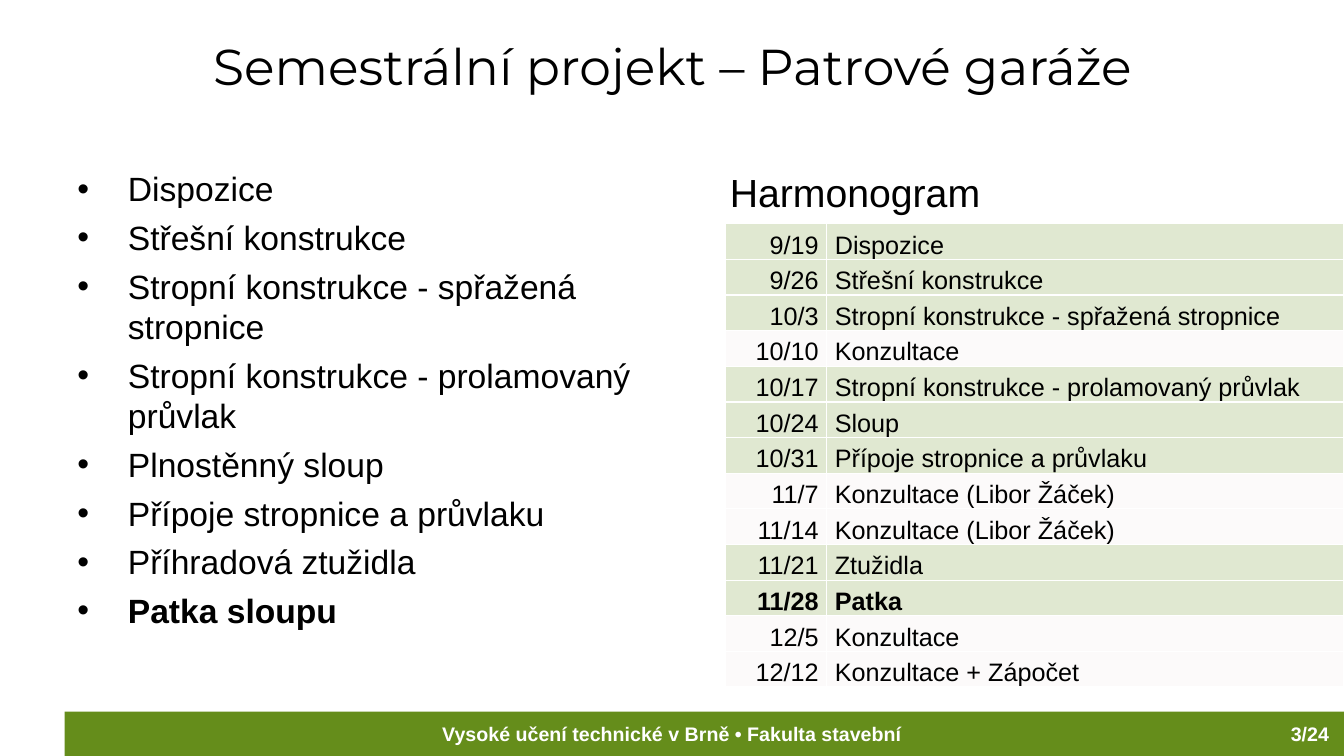
from dataclasses import dataclass

from lxml import etree
from pptx import Presentation
from pptx.dml.color import RGBColor
from pptx.enum.shapes import MSO_SHAPE
from pptx.enum.text import MSO_ANCHOR, PP_ALIGN
from pptx.oxml.ns import qn
from pptx.util import Inches, Pt

LEFT, CENTER, RIGHT = PP_ALIGN.LEFT, PP_ALIGN.CENTER, PP_ALIGN.RIGHT
TOP, BOTTOM = MSO_ANCHOR.TOP, MSO_ANCHOR.BOTTOM
RECT = MSO_SHAPE.RECTANGLE


@dataclass(frozen=True)
class Theme:
    """Colours, fonts and type sizes of the slide."""
    green: str = "658D1B"
    pink: str = "F4E7E7"
    white: str = "FFFFFF"
    black: str = "000000"
    font: str = "Arial"
    display: str = "Montserrat"
    title: int = 36
    head: int = 28
    body: int = 24
    cell: int = 18
    foot: int = 14
    gap: int = 6
    tint: int = 20


THEME = Theme()

TOPICS = [
    "Dispozice",
    "Střešní konstrukce",
    "Stropní konstrukce - spřažená stropnice",
    "Stropní konstrukce - prolamovaný průvlak",
    "Plnostěnný sloup",
    "Přípoje stropnice a průvlaku",
    "Příhradová ztužidla",
    "Patka sloupu",
]

PLAN = [
    ("9/19", "Dispozice"),
    ("9/26", "Střešní konstrukce"),
    ("10/3", "Stropní konstrukce - spřažená stropnice"),
    ("10/10", "Konzultace"),
    ("10/17", "Stropní konstrukce - prolamovaný průvlak"),
    ("10/24", "Sloup"),
    ("10/31", "Přípoje stropnice a průvlaku"),
    ("11/7", "Konzultace (Libor Žáček)"),
    ("11/14", "Konzultace (Libor Žáček)"),
    ("11/21", "Ztužidla"),
    ("11/28", "Patka"),
    ("12/5", "Konzultace"),
    ("12/12", "Konzultace + Zápočet"),
]
CURRENT = "11/28"


def write(para, text, size=THEME.body, color=THEME.black, font=THEME.font,
          bold=False, align=LEFT):
    """Put formatted text into a paragraph."""
    para.alignment = align
    run = para.add_run()
    run.text = text
    run.font.size = Pt(size)
    run.font.name = font
    run.font.bold = bold
    run.font.color.rgb = RGBColor.from_string(color)


def add_box(slide, left, top, width, height):
    """Add a wrapping text box and return its frame."""
    box = slide.shapes.add_textbox(
        Inches(left), Inches(top), Inches(width), Inches(height))
    box.text_frame.word_wrap = True
    return box.text_frame


def add_title(slide, text):
    """Place and fill the title placeholder."""
    title = slide.shapes.title
    title.left, title.top = Inches(0.67), Inches(0.3)
    title.width, title.height = Inches(12), Inches(1.09)
    frame = title.text_frame
    frame.vertical_anchor = TOP
    write(frame.paragraphs[0], text, size=THEME.title, font=THEME.display,
          align=CENTER)


def add_bullet(para):
    """Give a paragraph a hanging round bullet."""
    props = para._p.get_or_add_pPr()
    props.set("marL", str(Inches(0.5)))
    props.set("indent", str(-Inches(0.5)))
    etree.SubElement(props, qn("a:buFont")).set("typeface", THEME.font)
    etree.SubElement(props, qn("a:buChar")).set("char", "•")


def add_topics(slide):
    """Add the bulleted list of project topics."""
    frame = add_box(slide, 0.67, 1.62, 5.92, 5.08)
    for i, topic in enumerate(TOPICS):
        para = frame.add_paragraph() if i else frame.paragraphs[0]
        add_bullet(para)
        if i:
            para.space_before = Pt(THEME.gap)
        write(para, topic, bold=topic == TOPICS[-1])


def style_cell(cell, color):
    """Give a cell white borders and a tinted fill."""
    props = cell._tc.get_or_add_tcPr()
    for i, side in enumerate("LRTB"):
        line = etree.Element(qn(f"a:ln{side}"), w=str(Pt(1)))
        fill = etree.SubElement(line, qn("a:solidFill"))
        etree.SubElement(fill, qn("a:srgbClr")).set("val", THEME.white)
        props.insert(i, line)
    cell.fill.solid()
    cell.fill.fore_color.rgb = RGBColor.from_string(color)
    tone = props.find(qn("a:solidFill")).find(qn("a:srgbClr"))
    etree.SubElement(tone, qn("a:alpha")).set("val", str(THEME.tint * 1000))


def add_plan(slide):
    """Add the schedule heading and table."""
    frame = add_box(slide, 7.14, 1.62, 5.92, 0.6)
    write(frame.paragraphs[0], "Harmonogram", size=THEME.head)
    table = slide.shapes.add_table(
        len(PLAN), 2, Inches(7.19), Inches(2.22), Inches(6.14),
        Inches(4.6)).table
    table.first_row = table.horz_banding = False
    table.columns[0].width = Inches(1.01)
    table.columns[1].width = Inches(5.13)
    for r, (date, topic) in enumerate(PLAN):
        color = THEME.pink if topic.startswith("Konzultace") else THEME.green
        for c, (text, align) in enumerate([(date, RIGHT), (topic, LEFT)]):
            cell = table.cell(r, c)
            cell.margin_left = cell.margin_right = Inches(0.08)
            cell.margin_top, cell.margin_bottom = Inches(0.01), 0
            cell.vertical_anchor = BOTTOM
            style_cell(cell, color)
            write(cell.text_frame.paragraphs[0], text, size=THEME.cell,
                  bold=date == CURRENT, align=align)


def add_footer(slide):
    """Add the green bar with school name and page number."""
    bar = slide.shapes.add_shape(
        RECT, Inches(0.64), Inches(7.06), Inches(12.69), Inches(0.44))
    bar.shadow.inherit = False
    bar.fill.solid()
    bar.fill.fore_color.rgb = RGBColor.from_string(THEME.green)
    bar.line.fill.background()
    school = "Vysoké učení technické v Brně • Fakulta stavební"
    for text, left, width, align in [(school, 0, 13.33, CENTER),
                                     ("3/24", 11.97, 1.31, RIGHT)]:
        frame = add_box(slide, left, 7.11, width, 0.34)
        write(frame.paragraphs[0], text, size=THEME.foot, color=THEME.white,
              bold=True, align=align)


def main():
    """Build and save the slide."""
    deck = Presentation()
    deck.slide_width, deck.slide_height = Inches(13.33), Inches(7.5)
    slide = deck.slides.add_slide(deck.slide_layouts[5])
    add_footer(slide)
    add_title(slide, "Semestrální projekt – Patrové garáže")
    add_topics(slide)
    add_plan(slide)
    deck.save("out.pptx")


if __name__ == "__main__":
    main()
